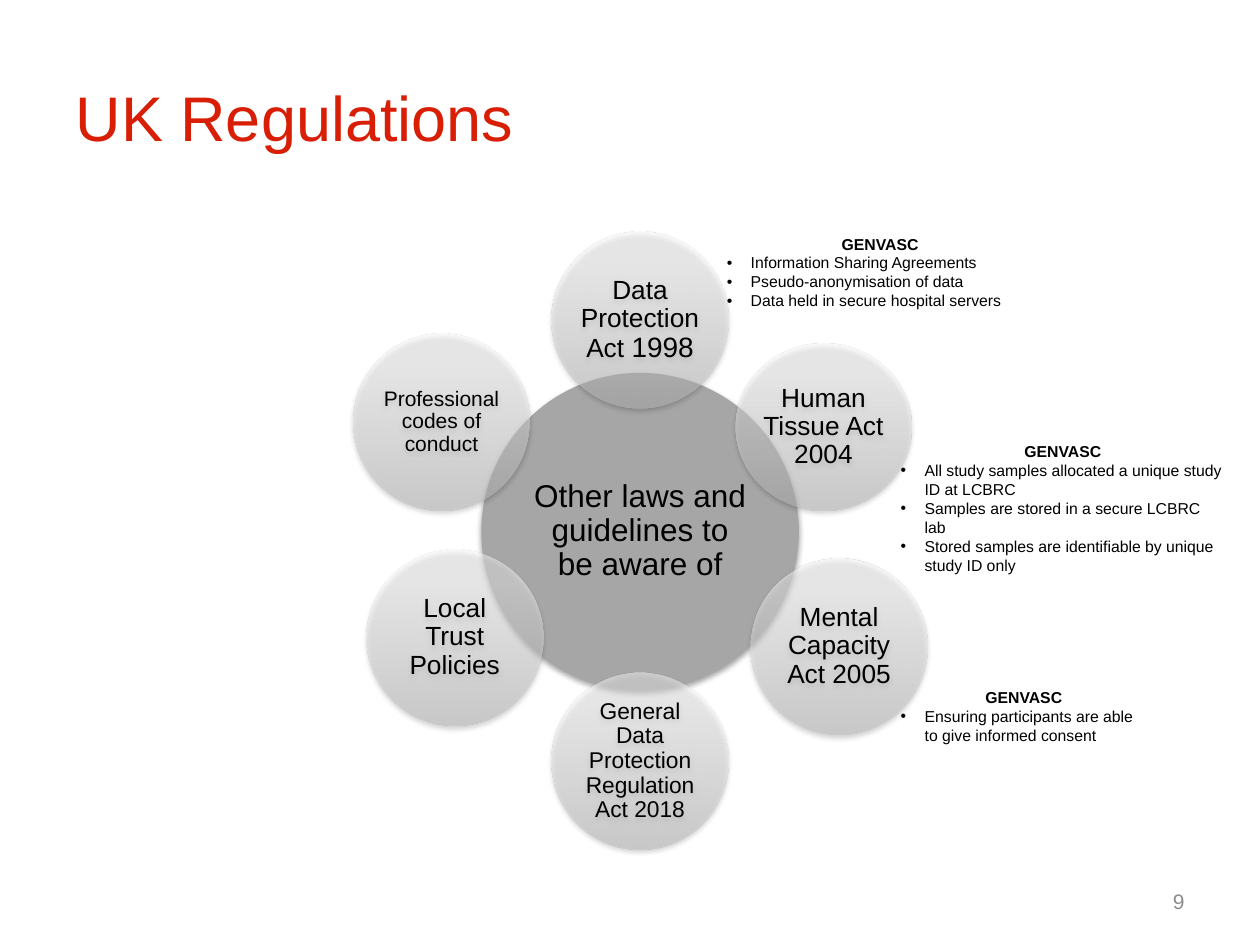
from lxml import etree
from pptx import Presentation
from pptx.dml.color import RGBColor
from pptx.enum.shapes import MSO_SHAPE
from pptx.enum.text import MSO_ANCHOR, PP_ALIGN
from pptx.oxml import parse_xml
from pptx.util import Inches, Pt

RED = RGBColor(0xD8, 0x1E, 0x05)
BLACK = RGBColor(0, 0, 0)
GREY = RGBColor(0x8C, 0x8C, 0x8C)
HUB = RGBColor(0xA6, 0xA6, 0xA6)
LOW = RGBColor(0xBE, 0xBE, 0xBE)
MID = RGBColor(0xF7, 0xF7, 0xF7)
TOP = RGBColor(0xF8, 0xF8, 0xF8)
NS = "http://schemas.openxmlformats.org/drawingml/2006/main"

# Slide on a grid of 100 columns by 75 rows
deck = Presentation()
deck.slide_width, deck.slide_height = Inches(10), Inches(7.5)
COL = deck.slide_width / 100
ROW = deck.slide_height / 75
page = deck.slides.add_slide(deck.slide_layouts[5])


def add_run(para, text, size, color=BLACK, bold=False):
    run = para.add_run()
    run.text = text
    run.font.name = "Arial"
    run.font.size = Pt(size)
    run.font.bold = bold
    run.font.color.rgb = color


def add_disc(mid, size, runs, inset):
    (x, y), (wide, high) = mid, size
    disc = page.shapes.add_shape(
        MSO_SHAPE.OVAL, int((x - wide / 2) * COL), int((y - high / 2) * ROW),
        int(wide * COL), int(high * ROW))
    disc.fill.solid()
    disc.fill.fore_color.rgb = HUB
    disc.line.fill.background()
    # Soft shadow below the disc
    disc.element.spPr.append(parse_xml(
        f'<a:effectLst xmlns:a="{NS}"><a:outerShdw blurRad="{Pt(3.1)}" '
        f'dist="{Pt(1.8)}" dir="5400000" rotWithShape="0"><a:srgbClr val="000000">'
        '<a:alpha val="35000"/></a:srgbClr></a:outerShdw></a:effectLst>'))
    frame = disc.text_frame
    frame.word_wrap = True
    frame.vertical_anchor = MSO_ANCHOR.MIDDLE
    frame.margin_left = frame.margin_right = Inches(inset)
    frame.margin_top = frame.margin_bottom = Inches(inset)
    para = frame.paragraphs[0]
    para.alignment = PP_ALIGN.CENTER
    para.line_spacing = 0.9
    for text, points in runs:
        add_run(para, text, points)
    return disc


# Title
title = page.shapes.title
title.left, title.top = int(5 * COL), int(3 * ROW)
title.width, title.height = int(90 * COL), int(12.5 * ROW)
title.text_frame.vertical_anchor = MSO_ANCHOR.MIDDLE
head = title.text_frame.paragraphs[0]
head.alignment = PP_ALIGN.LEFT
add_run(head, "UK Regulations", 36, RED)

# Page number
box = page.shapes.add_textbox(
    int(71.7 * COL), int(69.5 * ROW), int(23.3 * COL), int(4 * ROW))
box.text_frame.word_wrap = True
box.text_frame.vertical_anchor = MSO_ANCHOR.MIDDLE
para = box.text_frame.paragraphs[0]
para.alignment = PP_ALIGN.RIGHT
add_run(para, "9", 12, GREY)

# Hub
add_disc((50.8, 42.2), (25.2, 25.2),
         [("Other laws and guidelines to be aware of", 18)], 0.03)

# Ring of laws, clockwise from the top
ROUND = (14, 14)
LAWS = [
    ((50.8, 25.4), ROUND, [("Data Protection Act ", 15), ("1998", 16)]),
    ((65.35, 33.9), (13.9, 13.2), [("Human Tissue Act 2004", 15)]),
    ((66.6, 51.3), ROUND, [("Mental Capacity Act 2005", 15)]),
    ((50.8, 60.4), ROUND, [("General Data Protection Regulation Act 2018", 13)]),
    ((36.1, 50.6), ROUND, [("Local Trust Policies", 15)]),
    ((35.05, 33.5), ROUND, [("Professional codes of conduct", 12)]),
]
for mid, size, runs in LAWS:
    disc = add_disc(mid, size, runs, 0.01)
    # Half-clear gradient, dark at the foot
    stops = "".join(
        f'<a:gs pos="{pos}000"><a:srgbClr val="{shade}"><a:alpha val="50000"/>'
        '</a:srgbClr></a:gs>' for pos, shade in ((0, LOW), (80, MID), (100, TOP)))
    props = disc.element.spPr
    props.replace(props.find(f"{{{NS}}}solidFill"), parse_xml(
        f'<a:gradFill xmlns:a="{NS}" rotWithShape="1"><a:gsLst>{stops}</a:gsLst>'
        '<a:lin ang="16200000" scaled="0"/></a:gradFill>'))

# Study notes beside the laws
NOTES = [
    (56.7, 18.1, 26.3, 8.8, ["Information Sharing Agreements",
                             "Pseudo-anonymisation of data",
                             "Data held in secure hospital servers"]),
    (70.5, 54.1, 21.5, 5.6, ["Ensuring participants are able to give informed consent"]),
    (70.5, 34.6, 27.7, 11.6, ["All study samples allocated a unique study ID at LCBRC",
                              "Samples are stored in a secure LCBRC lab",
                              "Stored samples are identifiable by unique study ID only"]),
]
for x, y, wide, high, items in NOTES:
    box = page.shapes.add_textbox(
        int(x * COL), int(y * ROW), int(wide * COL), int(high * ROW))
    frame = box.text_frame
    frame.word_wrap = True
    head = frame.paragraphs[0]
    head.alignment = PP_ALIGN.CENTER
    add_run(head, "GENVASC", 9, bold=True)
    for item in items:
        para = frame.add_paragraph()
        props = para._p.get_or_add_pPr()
        props.set("marL", str(Inches(0.19)))
        props.set("indent", str(-Inches(0.19)))
        etree.SubElement(props, f"{{{NS}}}buFont", typeface="Arial")
        etree.SubElement(props, f"{{{NS}}}buChar", char="•")
        add_run(para, item, 9)

deck.save("out.pptx")
